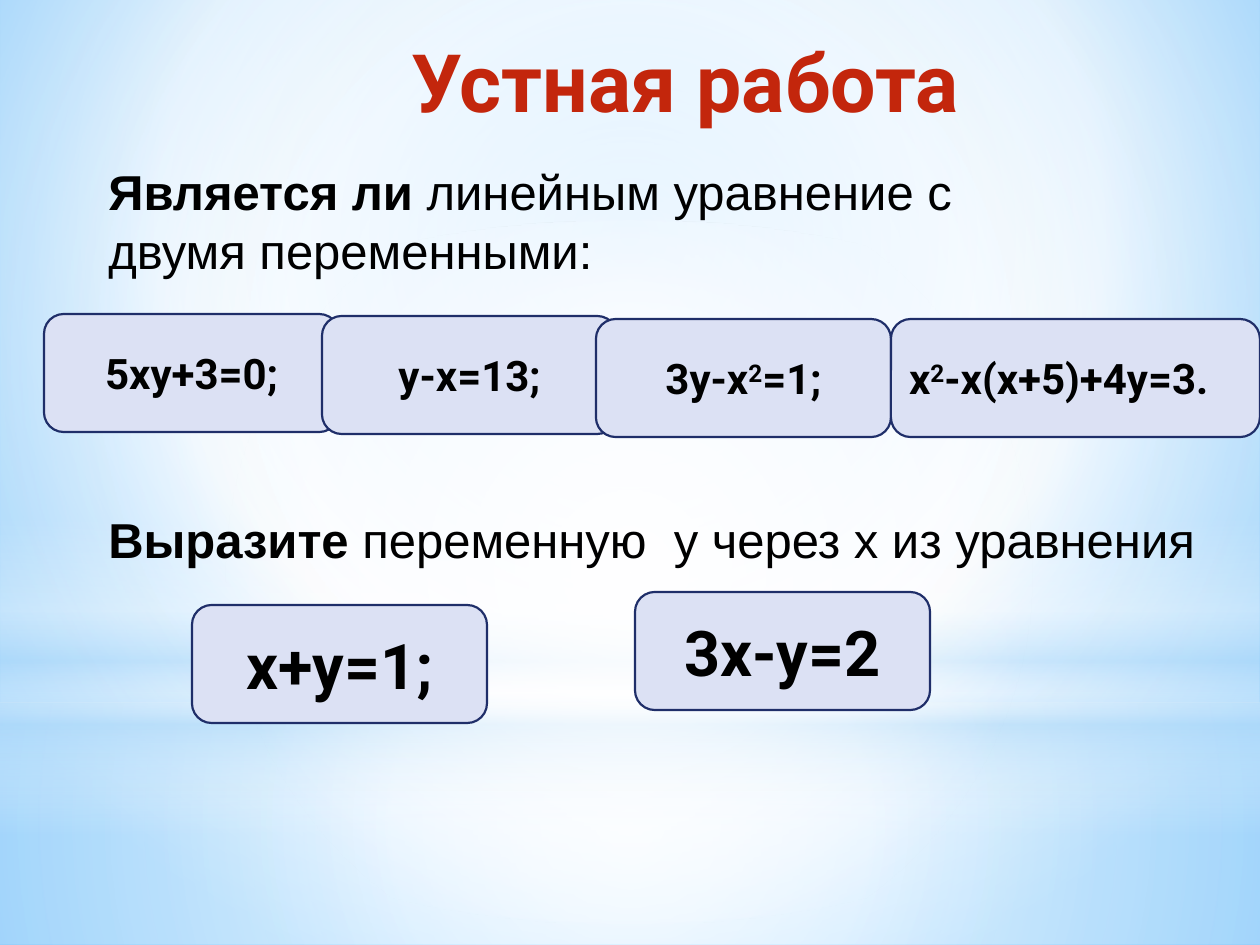
from lxml import etree
from pptx import Presentation, util as u
from pptx.dml.color import RGBColor
from pptx.enum import shapes, text
from pptx.oxml.ns import nsdecls, qn

PX = 914400 // 126
BLACK = RGBColor(0x00, 0x00, 0x00)
RED = RGBColor(0xC3, 0x26, 0x0C)
CARD_FILL = RGBColor(0xDC, 0xE1, 0xF4)
CARD_LINE = RGBColor(0x1F, 0x2E, 0x69)
RECT, OVAL = shapes.MSO_SHAPE.RECTANGLE, shapes.MSO_SHAPE.OVAL
LEFT, CENTER, RIGHT = text.PP_ALIGN.LEFT, text.PP_ALIGN.CENTER, text.PP_ALIGN.RIGHT

# Gradient stops: position %, colour, opacity %
SKY = [(0, "9ED5FF", 100), (60, "FFFFFF", 100), (100, "5BB9FF", 100)]
MIDDLE = (50, 50, 50, 50)
# Backdrop: shape, box in px, stops, focus rectangle (None = vertical gradient)
BACKDROP = [
    (RECT, (0, 703, 1260, 242),
     [(0, "FFFFFF", 91), (37, "FFFFFF", 76), (100, "B4DCFA", 79)], MIDDLE),
    (RECT, (0, 0, 1260, 703),
     [(0, "FFFFFF", 89), (48, "FFFFFF", 62), (100, "B4DCFA", 79)], MIDDLE),
    (RECT, (0, 519, 1260, 315),
     [(0, "FFFFFF", 0), (29, "FFFFFF", 30), (45, "B4DCFA", 40),
      (55, "FFFFFF", 26), (65, "B4DCFA", 60), (100, "FFFFFF", 0)], None),
    (OVAL, (0, 221, 1260, 703), [(0, "FFFFFF", 100), (56, "FFFFFF", 0)], MIDDLE),
]

TITLE = ("Устная работа", (74, 26, 897, 158))
# Tasks: box in px, bold lead, rest
TASKS = [
    ((96, 155, 1002, 131), "Является ли", " линейным уравнение с двумя переменными:"),
    ((96, 503, 1119, 72), "Выразите ", "переменную  у через х из уравнения"),
]
# Equations: left, top, width in px, size, alignment, text (^ marks a raised digit)
CARD_H = 118
EQUATIONS = [
    (44, 314, 295, 24, CENTER, "5ху+3=0;"),
    (322, 316, 295, 24, CENTER, "у-х=13;"),
    (596, 319, 295, 24, CENTER, "3у-х^2=1;"),
    (891, 319, 369, 24, LEFT, "х^2-х(х+5)+4у=3."),
    (192, 605, 295, 36, CENTER, "х+у=1;"),
    (635, 592, 295, 36, CENTER, "3х-у=2"),
]


def emu(box):
    return [v * PX for v in box]


def gradient(stops, focus):
    gs = "".join(
        f'<a:gs pos="{pos * 1000}"><a:srgbClr val="{color}">'
        f'<a:alpha val="{alpha * 1000}"/></a:srgbClr></a:gs>'
        for pos, color, alpha in stops)
    if focus:
        sides = " ".join(f'{k}="{v * 1000}"' for k, v in zip("ltrb", focus))
        way = f'<a:path path="circle"><a:fillToRect {sides}/></a:path>'
    else:
        way = '<a:lin ang="5400000" scaled="0"/>'
    return etree.fromstring(
        f'<a:gradFill {nsdecls("a")} rotWithShape="1"><a:gsLst>{gs}</a:gsLst>{way}</a:gradFill>')


def replace_solid(parent, stops, focus):
    parent.replace(parent.find(qn("a:solidFill")), gradient(stops, focus))


def set_font(font, name, size, color, bold=None):
    font.name, font.size, font.bold = name, u.Pt(size), bold
    font.color.rgb = color


def add_text(s, box):
    tf = s.shapes.add_textbox(*emu(box)).text_frame
    tf.word_wrap = True
    return tf.paragraphs[0]


prs = Presentation()
prs.slide_width, prs.slide_height = emu((1260, 945))
s = prs.slides.add_slide(prs.slide_layouts[6])

# Background and soft light
s.background.fill.solid()
replace_solid(s.element.find(".//" + qn("p:bgPr")), SKY, (20, 10, 20, 60))
for kind, box, stops, focus in BACKDROP:
    sp = s.shapes.add_shape(kind, *emu(box))
    sp.shadow.inherit = False
    sp.line.fill.background()
    sp.fill.solid()
    replace_solid(sp.element.spPr, stops, focus)

# Title
title, box = TITLE
p = add_text(s, box)
p.text, p.alignment = title, RIGHT
set_font(p.font, "Roboto", 46, RED, True)

# Tasks
for box, lead, rest in TASKS:
    p = add_text(s, box)
    set_font(p.font, "Arial", 28, BLACK)
    for words, bold in ((lead, True), (rest, False)):
        r = p.add_run()
        r.text, r.font.bold = words, bold

# Equation cards
for x, y, w, size, align, equation in EQUATIONS:
    sp = s.shapes.add_shape(shapes.MSO_SHAPE.ROUNDED_RECTANGLE, *emu((x, y, w, CARD_H)))
    sp.shadow.inherit = False
    sp.fill.solid()
    sp.fill.fore_color.rgb = CARD_FILL
    sp.line.color.rgb, sp.line.width = CARD_LINE, u.Pt(1.25)
    tf = sp.text_frame
    tf.word_wrap, tf.vertical_anchor = True, text.MSO_ANCHOR.MIDDLE
    p = tf.paragraphs[0]
    p.alignment = align
    set_font(p.font, "Roboto", size, BLACK, True)
    base, _, raised = equation.partition("^")
    for part, shift in ((base, 0), (raised[:1], 30), (raised[1:], 0)):
        if part:
            r = p.add_run()
            r.text = part
            if shift:
                r.font._element.set("baseline", str(shift * 1000))

prs.save("out.pptx")
